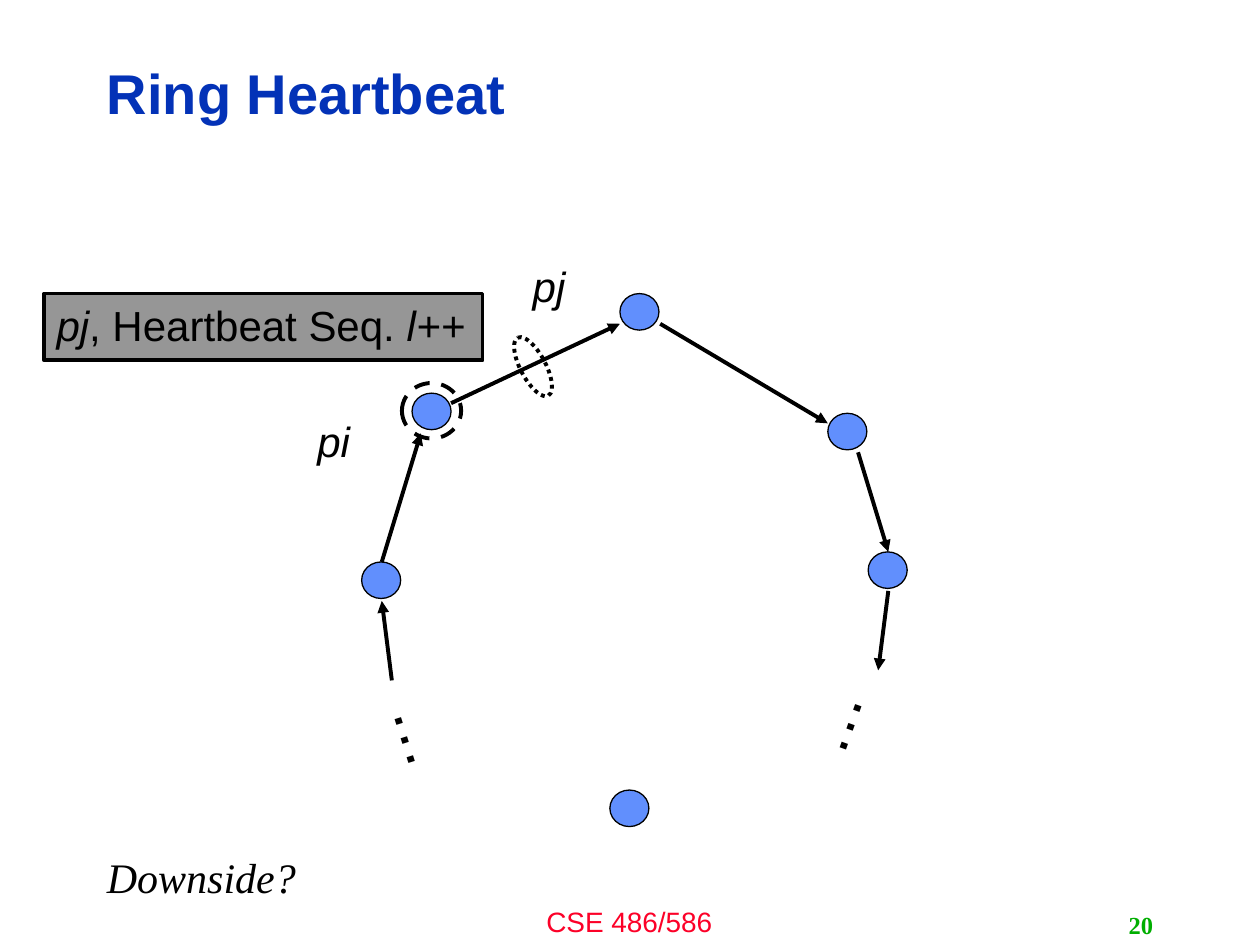
from pptx import Presentation
from pptx.util import Inches, Pt
from pptx.dml.color import RGBColor
from pptx.enum.shapes import MSO_SHAPE, MSO_CONNECTOR
from pptx.enum.text import PP_ALIGN, MSO_ANCHOR
from pptx.enum.dml import MSO_LINE
from pptx.oxml.ns import qn
from lxml import etree

OVAL, RECT = MSO_SHAPE.OVAL, MSO_SHAPE.RECTANGLE
STRAIGHT = MSO_CONNECTOR.STRAIGHT
LEFT, MID, RIGHT = PP_ALIGN.LEFT, PP_ALIGN.CENTER, PP_ALIGN.RIGHT
TOP, CENTER = MSO_ANCHOR.TOP, MSO_ANCHOR.MIDDLE
DOT, DASH = MSO_LINE.ROUND_DOT, MSO_LINE.DASH
SANS, SERIF = "Arial", "Times New Roman"
BLACK, BLUE, GRAY = "000000", "618FFD", "969696"

NODE = (0.31, 0.29)
NODES = [(6.57, 3.28), (3.27, 3.12), (2.87, 4.46),
         (6.89, 4.38), (4.92, 2.33), (4.84, 6.27)]
ARROWS = [
    ((3.03, 4.46), (3.34, 3.44)),
    ((3.58, 3.2), (4.92, 2.57)),
    ((5.24, 2.57), (6.57, 3.36)),
    ((6.81, 3.59), (7.05, 4.38)),
    ((7.05, 4.69), (6.97, 5.32)),
    ((3.11, 5.4), (3.03, 4.77)),
]
RINGS = [((3.97, 2.81, 0.52, 0.2), DOT, 62.2),
         ((3.19, 3.04, 0.47, 0.44), DASH, 0)]
MESSAGE = [("pj", True), (", Heartbeat Seq. ", False), ("l++", True)]
LABELS = [("pj", (4.13, 2.02, 0.46, 0.5), SANS),
          ("pi", (2.42, 3.25, 0.46, 0.5), SANS),
          ("Downside?", (0.75, 6.71, 1.7, 0.5), SERIF)]
DOTS = [((6.57, 5.48, 0.7, 0.7), 109.7), ((3.03, 5.48, 0.7, 0.7), 72.5)]

deck = Presentation()
deck.slide_width, deck.slide_height = Inches(10), Inches(7.5)
slide = deck.slides.add_slide(deck.slide_layouts[6])
shapes = slide.shapes


def color(code):
    return RGBColor.from_string(code)


def draw(kind, box, fill=None, width=2.25, dash=None, turn=0):
    shape = shapes.add_shape(kind, *map(Inches, box))
    shape.shadow.inherit = False
    shape.rotation = turn
    if fill:
        shape.fill.solid()
        shape.fill.fore_color.rgb = color(fill)
    else:
        shape.fill.background()
    shape.line.color.rgb = color(BLACK)
    shape.line.width = Pt(width)
    if dash:
        shape.line.dash_style = dash
    return shape


def write(shape, runs, size, face=SANS, ink=BLACK, bold=False,
          align=LEFT, anchor=TOP, wrap=False):
    frame = shape.text_frame
    frame.word_wrap = wrap
    frame.vertical_anchor = anchor
    para = frame.paragraphs[0]
    para.alignment = align
    font = para.font
    font.size, font.name, font.bold = Pt(size), face, bold
    font.color.rgb = color(ink)
    for text, slant in runs:
        run = para.add_run()
        run.text = text
        run.font.italic = slant
    return para


def label(text, box, size, slant=False, turn=0, **style):
    shape = shapes.add_textbox(*map(Inches, box))
    shape.rotation = turn
    return write(shape, [(text, slant)], size, **style)


def arrow(start, end):
    link = shapes.add_connector(STRAIGHT, *map(Inches, start + end))
    link.line.color.rgb = color(BLACK)
    link.line.width = Pt(2.25)
    tip = etree.SubElement(link.line._get_or_add_ln(), qn("a:tailEnd"))
    tip.set("type", "triangle")
    etree.SubElement(link._element.spPr, qn("a:effectLst"))


label("CSE 486/586", (3.33, 7.13, 3.33, 0.37), 16, ink="FC0128",
      align=MID, wrap=True)
title = label("Ring Heartbeat", (0.75, 0.36, 7.98, 0.81), 32, ink="0332B7",
              bold=True, anchor=CENTER, wrap=True)
title.line_spacing = 0.9
label("20", (7.17, 7.18, 2.08, 0.32), 14, face=SERIF, ink="00AE00",
      bold=True, align=RIGHT, anchor=CENTER, wrap=True)

for spot in NODES:
    draw(OVAL, spot + NODE, BLUE, 0.75)
for start, end in ARROWS:
    arrow(start, end)
write(draw(RECT, (0.35, 2.33, 3.48, 0.53), GRAY), MESSAGE, 24)
for box, dash, turn in RINGS:
    draw(OVAL, box, dash=dash, turn=turn)
for text, box, face in LABELS:
    label(text, box, 24, slant=True, face=face)
for box, turn in DOTS:
    label("…", box, 36, turn=turn)

deck.save("out.pptx")
